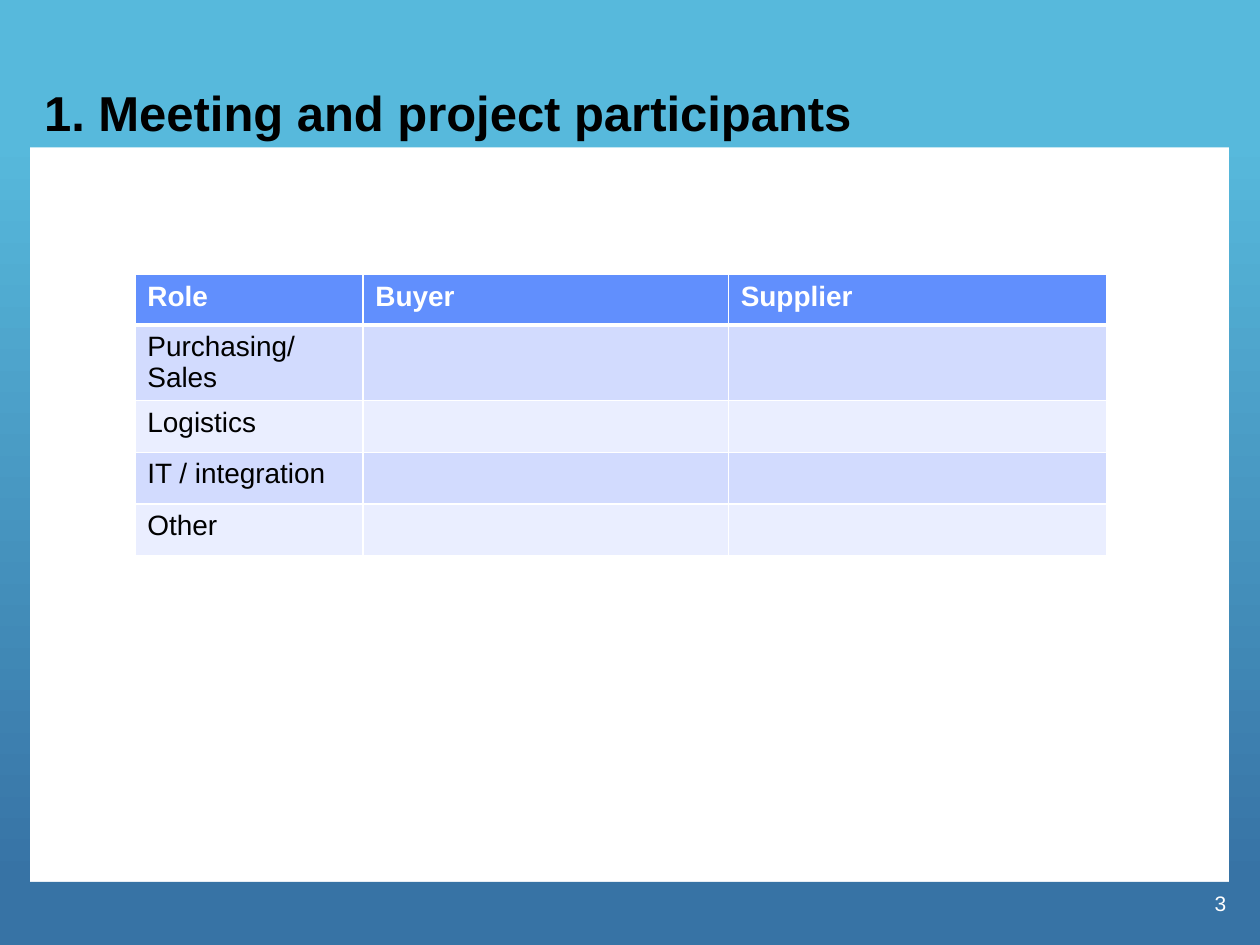
from lxml.etree import SubElement
from pptx import Presentation
from pptx.dml.color import RGBColor
from pptx.enum.shapes import MSO_SHAPE as Shape
from pptx.enum.text import MSO_ANCHOR as Anchor, PP_ALIGN as Align
from pptx.oxml.ns import qn
from pptx.util import Inches, Pt

SKY, NAVY, WHITE, BLACK = "57B9DC", "3773A5", "FFFFFF", "000000"
HEADER, BANDS = "618FFD", ("D2DBFE", "EAEEFF")
ROWS = [
    ("Role", "Buyer", "Supplier"),
    ("Purchasing/ Sales", "", ""),
    ("Logistics", "", ""),
    ("IT / integration", "", ""),
    ("Other", "", ""),
]


def color(value):
    return RGBColor.from_string(value)


def write(frame, text, *, size, ink=BLACK, bold=False, align=Align.LEFT, anchor=None, wrap=True):
    frame.text = text
    frame.word_wrap = wrap
    if anchor is not None:
        frame.vertical_anchor = anchor
    paragraph = frame.paragraphs[0]
    paragraph.alignment = align
    font = paragraph.font
    font.name, font.size, font.bold = "Arial", Pt(size), bold
    font.color.rgb = color(ink)


def add_borders(cell, bottom):
    properties = cell._tc.get_or_add_tcPr()
    for side, width in (("L", 1), ("R", 1), ("T", 1), ("B", bottom)):
        line = SubElement(properties, qn(f"a:ln{side}"), w=str(Pt(width)))
        fill = SubElement(line, qn("a:solidFill"))
        SubElement(fill, qn("a:srgbClr"), val=WHITE)


class SlideBuilder:
    def __init__(self, presentation):
        self.slide = presentation.slides.add_slide(presentation.slide_layouts[5])
        self.shapes = self.slide.shapes

    def band(self, left, top, width, height, fill, fade_to=None):
        shape = self.shapes.add_shape(
            Shape.RECTANGLE, Inches(left), Inches(top), Inches(width), Inches(height))
        shape.shadow.inherit = False
        shape.line.fill.background()
        if fade_to:
            shape.fill.gradient()
            shape.fill.gradient_angle = 270
            for stop, value in zip(shape.fill.gradient_stops, (fill, fade_to)):
                stop.color.rgb = color(value)
        else:
            shape.fill.solid()
            shape.fill.fore_color.rgb = color(fill)

    def title(self, text, left, top, width, height):
        title = self.shapes.title
        title.left, title.top = Inches(left), Inches(top)
        title.width, title.height = Inches(width), Inches(height)
        write(title.text_frame, text, size=28, bold=True, anchor=Anchor.BOTTOM)
        self.shapes.element.append(title.element)

    def page_number(self, text, left, top, width, height):
        box = self.shapes.add_textbox(Inches(left), Inches(top), Inches(width), Inches(height))
        write(box.text_frame, text, size=12, ink=WHITE, align=Align.RIGHT, anchor=Anchor.MIDDLE)

    def table(self, rows, left, top, widths, heights):
        table = self.shapes.add_table(
            len(rows), len(widths), Inches(left), Inches(top),
            Inches(sum(widths)), Inches(sum(heights))).table
        for column, width in zip(table.columns, widths):
            column.width = Inches(width)
        for index, (row, height, texts) in enumerate(zip(table.rows, heights, rows)):
            row.height = Inches(height)
            is_header = index == 0
            for cell, text in zip(row.cells, texts):
                add_borders(cell, bottom=3 if is_header else 1)
                cell.fill.solid()
                cell.fill.fore_color.rgb = color(HEADER if is_header else BANDS[(index - 1) % 2])
                write(cell.text_frame, text, size=16, bold=is_header,
                      ink=WHITE if is_header else BLACK)


def main():
    presentation = Presentation()
    presentation.slide_width, presentation.slide_height = Inches(10), Inches(7.5)
    builder = SlideBuilder(presentation)
    for left in (-0.01, 9.75):
        builder.band(left, 1.08, 0.25, 5.92, SKY, fade_to=NAVY)
    builder.band(0, 7, 10, 0.5, NAVY)
    builder.band(0, 0, 10, 1.17, SKY)
    builder.page_number("3", 7.75, 6.92, 2.08, 0.5)
    builder.title("1. Meeting and project participants", 0.25, 0.17, 9.5, 1)
    builder.table(ROWS, 1.07, 2.18, (1.81, 2.9, 3), (0.4, 0.6, 0.41, 0.41, 0.41))
    presentation.save("out.pptx")


if __name__ == "__main__":
    main()
